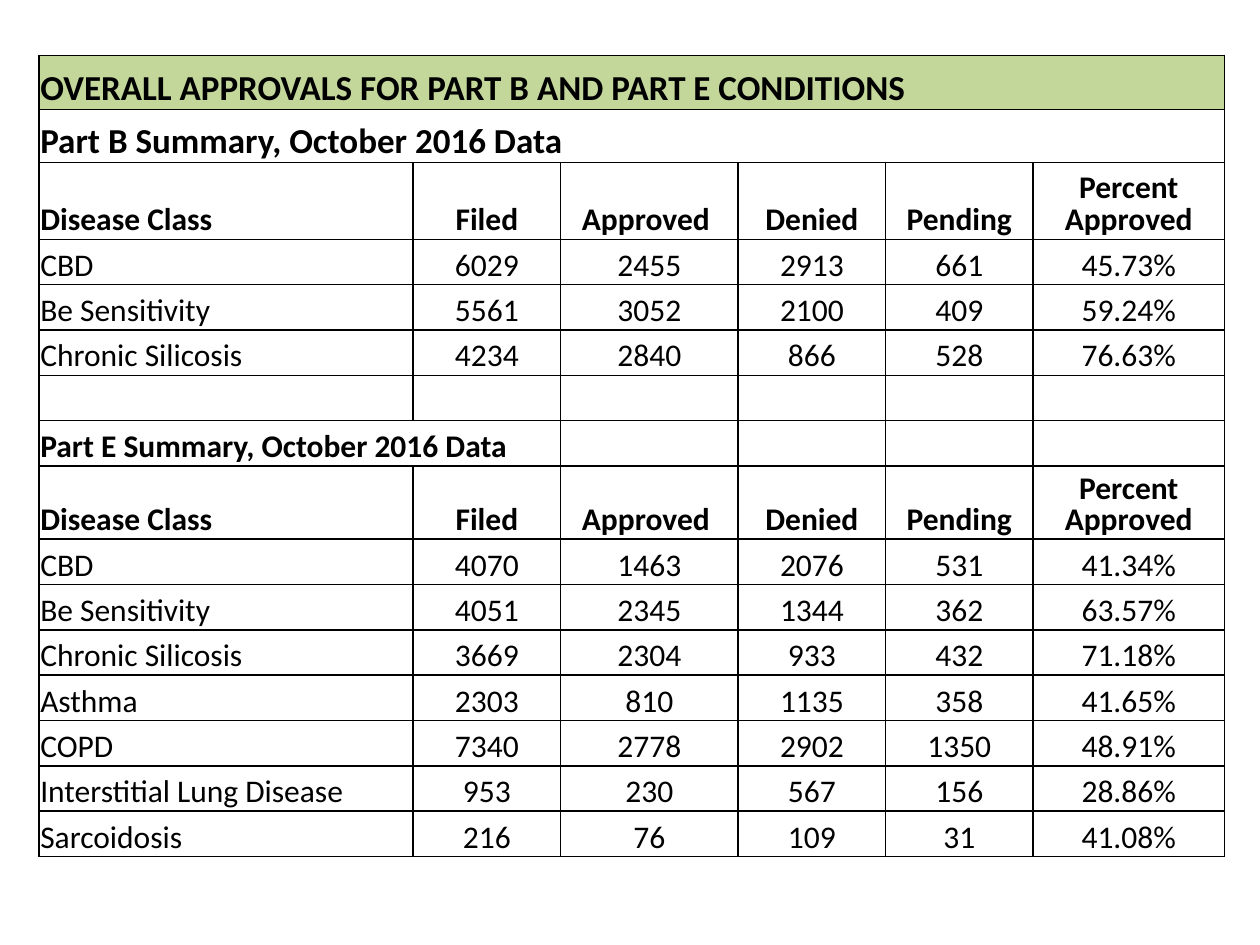
"""Build a one-slide table of Part B and Part E approvals by disease class."""
from lxml import etree
from pptx import Presentation
from pptx.dml.color import RGBColor
from pptx.enum.text import MSO_ANCHOR, PP_ALIGN
from pptx.oxml.ns import qn
from pptx.util import Inches, Pt

BOTTOM = MSO_ANCHOR.BOTTOM
LEFT, CENTER = PP_ALIGN.LEFT, PP_ALIGN.CENTER
BLACK = RGBColor(0x00, 0x00, 0x00)
GREEN = RGBColor(0xC4, 0xD7, 0x9B)

HEADINGS = ("Disease Class", "Filed", "Approved ", "Denied", "Pending", "Percent Approved")
PART_B = [
    ("CBD", "6029", "2455", "2913", "661", "45.73%"),
    ("Be Sensitivity", "5561", "3052", "2100", "409", "59.24%"),
    ("Chronic Silicosis", "4234", "2840", "866", "528", "76.63%"),
]
PART_E = [
    ("CBD", "4070", "1463", "2076", "531", "41.34%"),
    ("Be Sensitivity", "4051", "2345", "1344", "362", "63.57%"),
    ("Chronic Silicosis", "3669", "2304", "933", "432", "71.18%"),
    ("Asthma", "2303", "810", "1135", "358", "41.65%"),
    ("COPD", "7340", "2778", "2902", "1350", "48.91%"),
    ("Interstitial Lung Disease", "953", "230", "567", "156", "28.86%"),
    ("Sarcoidosis", "216", "76", "109", "31", "41.08%"),
]
COLUMN_WIDTHS = (2.97, 1.17, 1.41, 1.17, 1.17, 1.52)
BODY = dict(height=0.36, size=18, bold=False, spacing=None, span=1, fill=None)
TITLE = BODY | dict(height=0.43, size=20, bold=True, span=6, fill=GREEN)
PART_B_HEADING = TITLE | dict(height=0.42, fill=None)
PART_E_HEADING = BODY | dict(bold=True, span=2)
PART_B_COLUMNS = BODY | dict(height=0.61, bold=True, spacing=18.6)
PART_E_COLUMNS = BODY | dict(height=0.58, bold=True, spacing=17.6)

ROWS = [
    (("OVERALL APPROVALS FOR PART B AND PART E CONDITIONS",), TITLE),
    (("Part B Summary, October 2016 Data",), PART_B_HEADING),
    (HEADINGS, PART_B_COLUMNS),
    *((record, BODY) for record in PART_B),
    ((), BODY),
    (("Part E Summary, October 2016 Data",), PART_E_HEADING),
    (HEADINGS, PART_E_COLUMNS),
    *((record, BODY) for record in PART_E),
]


def add_borders(cell):
    properties = cell._tc.get_or_add_tcPr()
    for side in ("a:lnL", "a:lnR", "a:lnT", "a:lnB"):
        line = etree.SubElement(properties, qn(side), w=str(Pt(1)))
        solid = etree.SubElement(line, qn("a:solidFill"))
        etree.SubElement(solid, qn("a:srgbClr"), val=str(BLACK))


def format_cell(cell, text, alignment, style):
    cell.text = text
    cell.vertical_anchor = BOTTOM
    cell.margin_left = cell.margin_right = cell.margin_top = Inches(0.01)
    cell.margin_bottom = 0
    add_borders(cell)
    if style["fill"] is None:
        cell.fill.background()
    else:
        cell.fill.solid()
        cell.fill.fore_color.rgb = style["fill"]
    paragraph = cell.text_frame.paragraphs[0]
    paragraph.alignment = alignment
    if style["spacing"]:
        paragraph.line_spacing = Pt(style["spacing"])
    paragraph.font.name = "Calibri"
    paragraph.font.size = Pt(style["size"])
    paragraph.font.bold = style["bold"]
    paragraph.font.color.rgb = BLACK


def main():
    presentation = Presentation()
    presentation.slide_width, presentation.slide_height = Inches(10), Inches(7.5)
    slide = presentation.slides.add_slide(presentation.slide_layouts[6])
    total_height = sum(style["height"] for _, style in ROWS)
    approvals = slide.shapes.add_table(
        len(ROWS), len(COLUMN_WIDTHS), Inches(0.31), Inches(0.44),
        Inches(sum(COLUMN_WIDTHS)), Inches(total_height),
    ).table
    approvals.first_row = approvals.horz_banding = False
    for column, width in zip(approvals.columns, COLUMN_WIDTHS):
        column.width = Inches(width)
    for r, (texts, style) in enumerate(ROWS):
        approvals.rows[r].height = Inches(style["height"])
        for c in range(len(COLUMN_WIDTHS)):
            text = texts[c] if c < len(texts) else ""
            format_cell(approvals.cell(r, c), text, CENTER if c else LEFT, style)
        if style["span"] > 1:
            approvals.cell(r, 0).merge(approvals.cell(r, style["span"] - 1))
    presentation.save("out.pptx")


if __name__ == "__main__":
    main()
